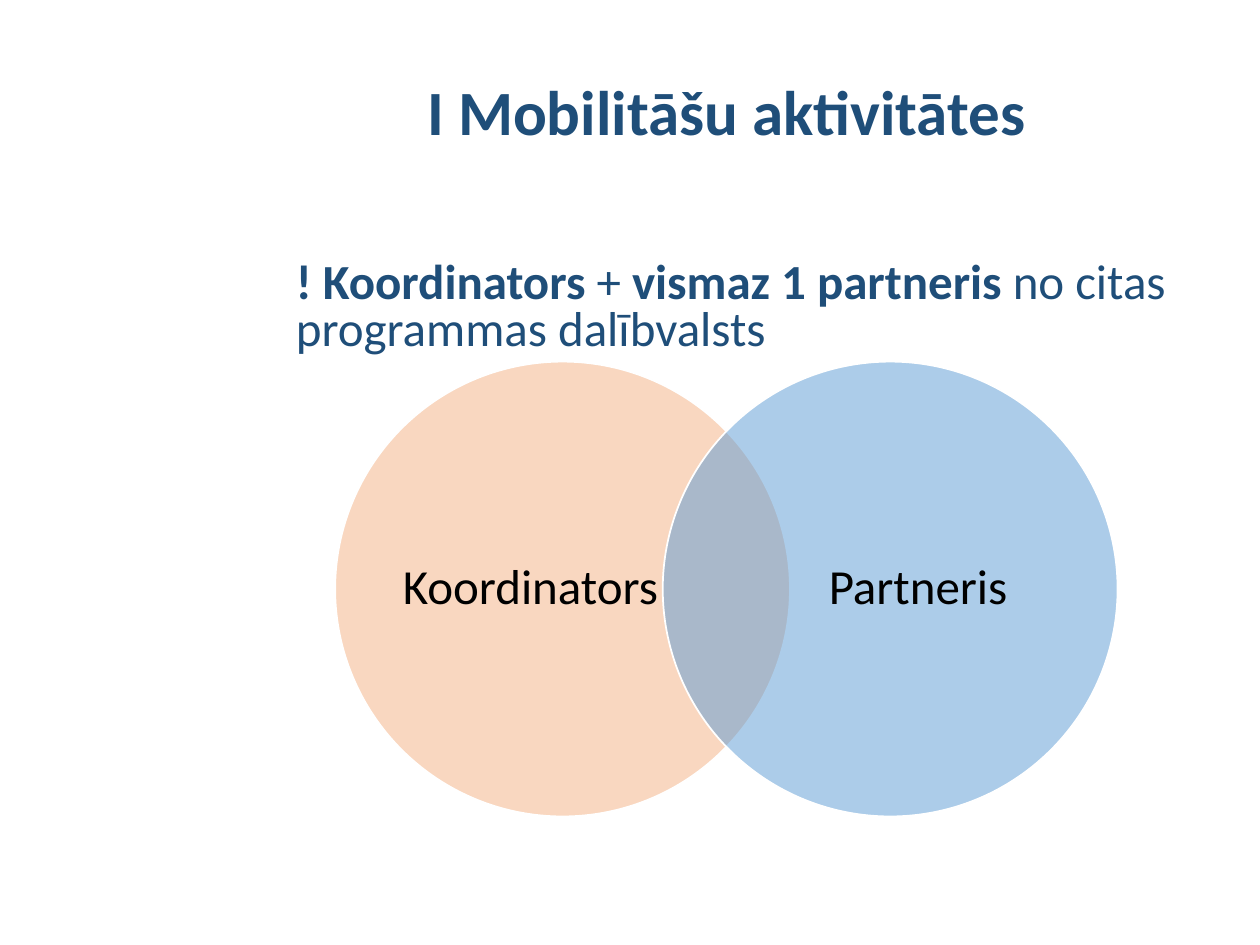
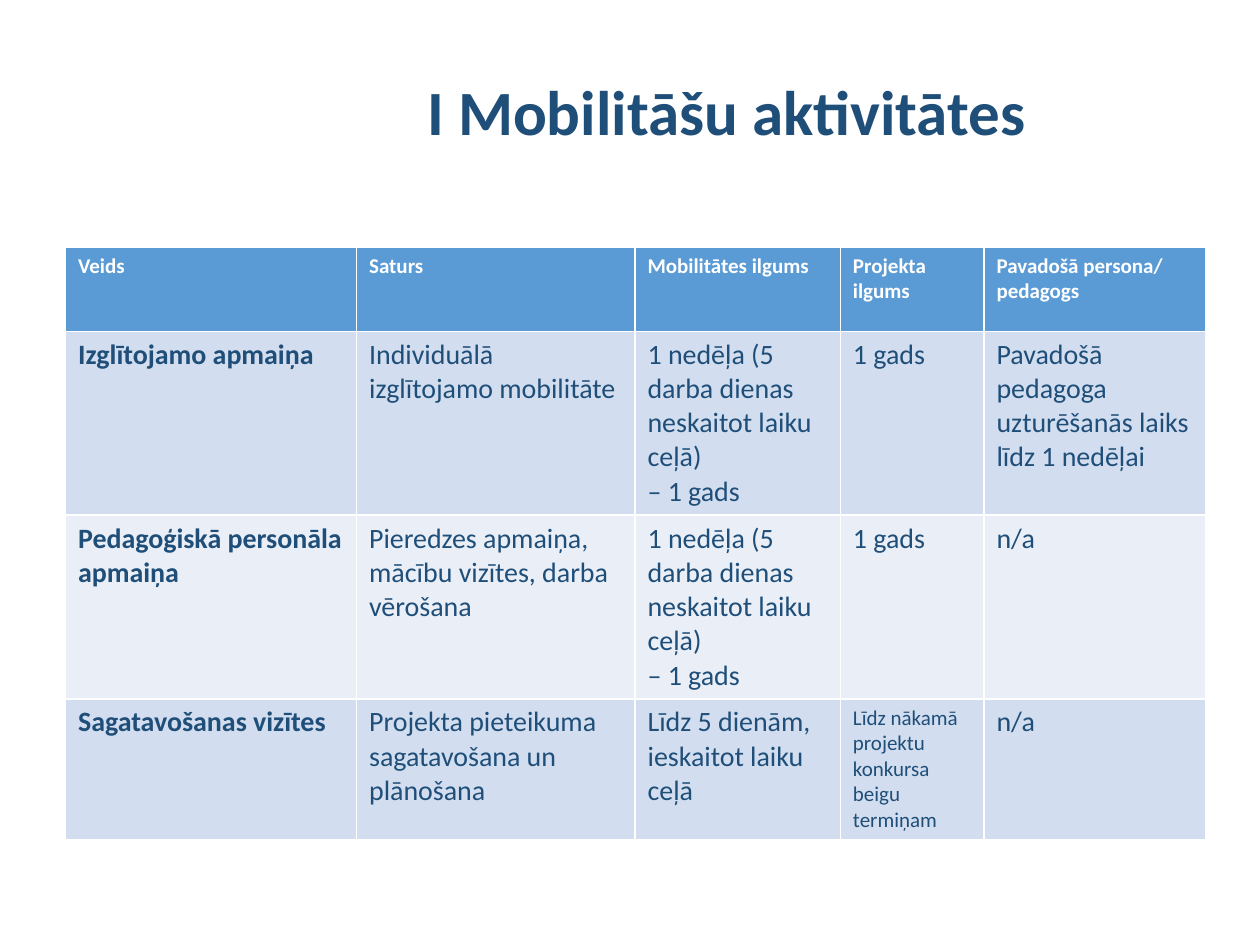
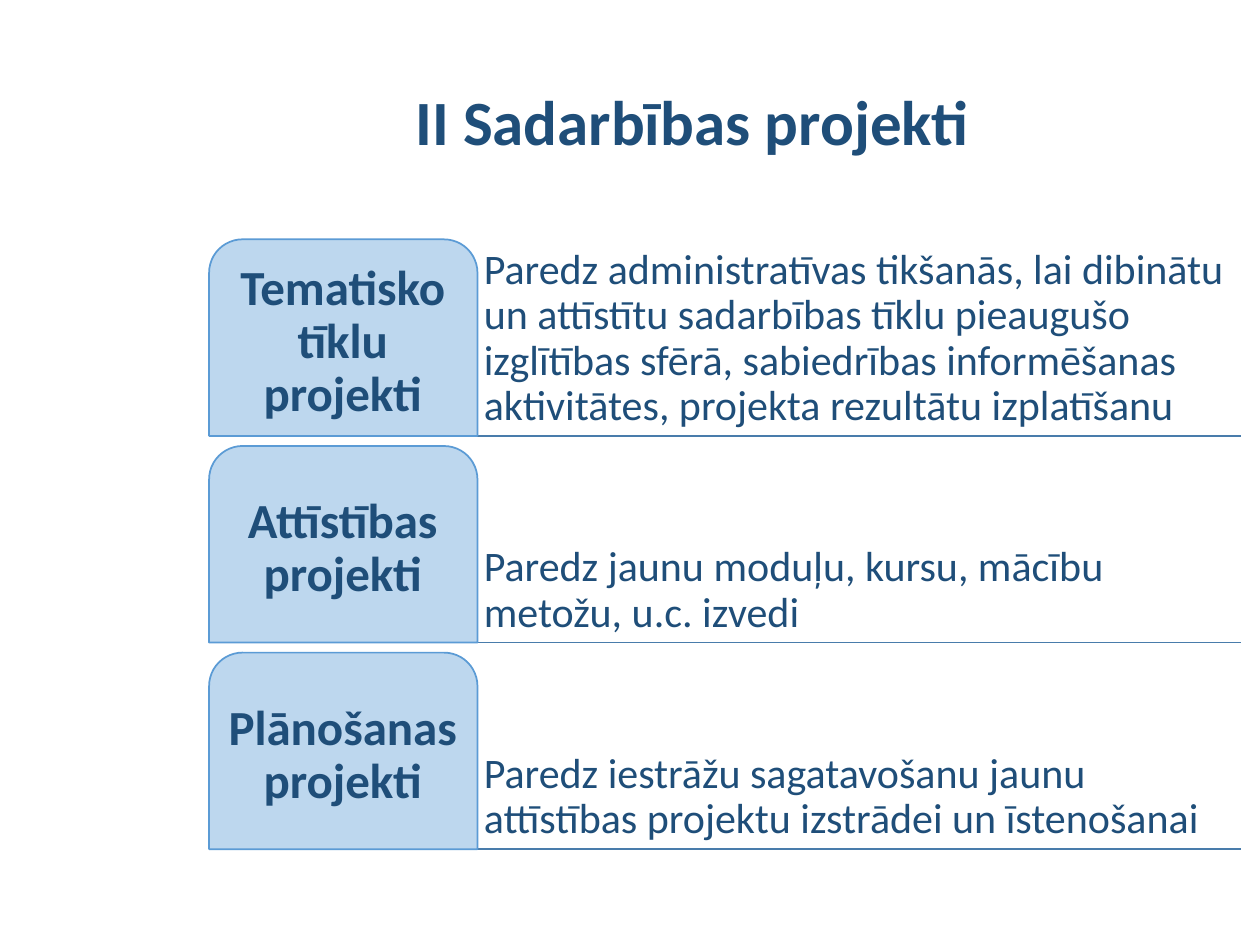
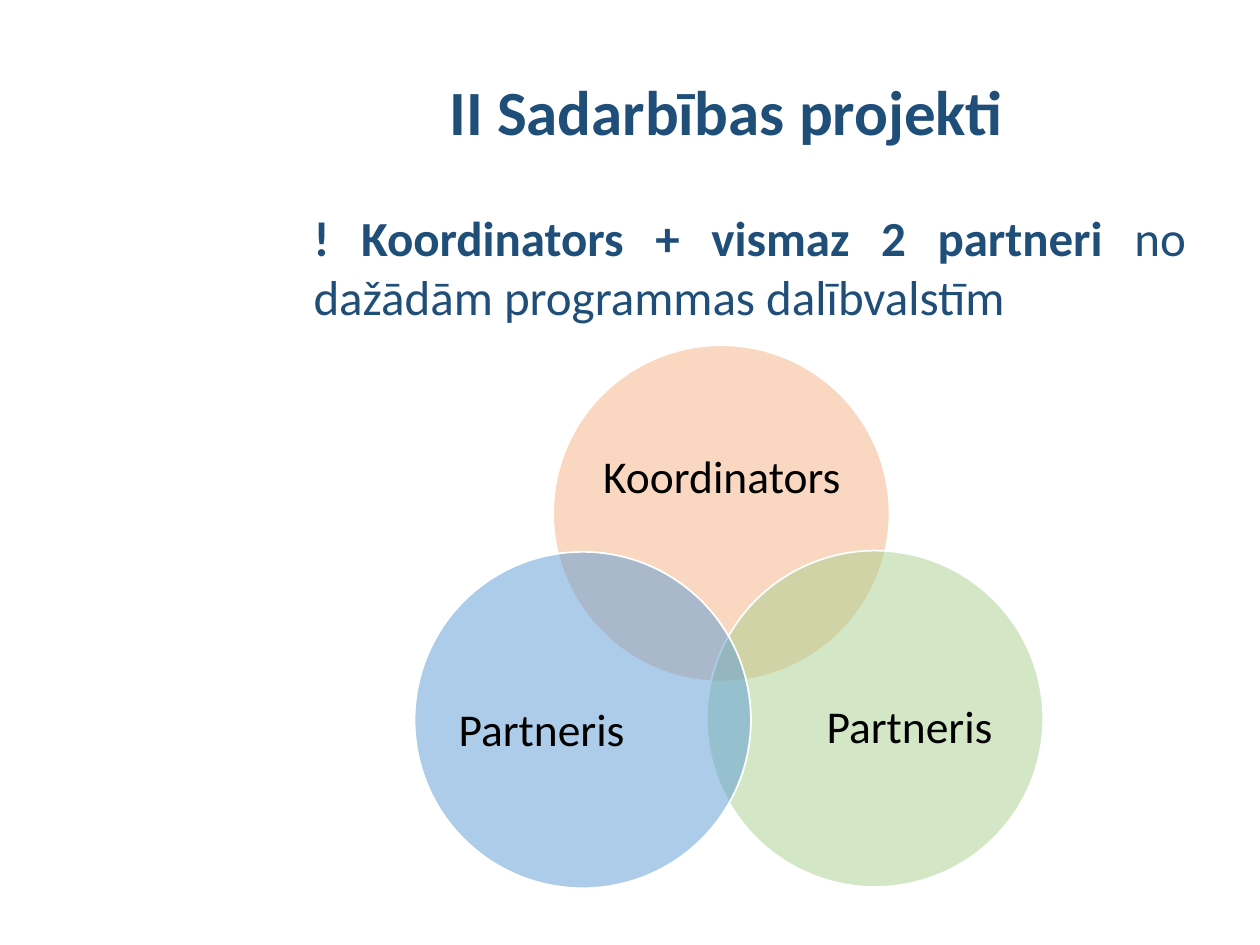
from lxml.etree import SubElement
from pptx import Presentation
from pptx.dml.color import RGBColor as RGB
from pptx.enum.shapes import MSO_CONNECTOR as LINE, MSO_SHAPE as SHAPE
from pptx.enum.text import MSO_ANCHOR as ANCHOR, PP_ALIGN as ALIGN
from pptx.oxml.ns import qn
from pptx.util import Inches, Pt


class Theme:
    font = "Calibri"
    navy = RGB.from_string("1F4E79")
    blue = RGB.from_string("5B9BD5")
    pale = RGB.from_string("BDD7EE")
    rule = RGB.from_string("497CAB")
    peach = RGB.from_string("F4B183")
    green = RGB.from_string("A9D18E")
    bands = RGB.from_string("D2DEEF"), RGB.from_string("EAEFF7")
    white = RGB.from_string("FFFFFF")
    black = RGB.from_string("000000")
    title, lead, text, venn, cell, small = 36, 28, 24, 26, 16, 12


def fill_in(para, runs, size, color, bold=False, align=ALIGN.LEFT, gap=None):
    """Write a paragraph from a string, or from (words, bold) pairs."""
    if isinstance(runs, str):
        para.text = runs
        para.font.bold = bold
    else:
        for words, heavy in runs:
            run = para.add_run()
            run.text = words
            run.font.bold = heavy
    para.font.name = Theme.font
    para.font.size = Pt(size)
    para.font.color.rgb = color
    para.alignment = align
    para.line_spacing = gap


def add_text(slide, box, runs, size, color, inset=None, anchor=ANCHOR.TOP, **style):
    frame = slide.shapes.add_textbox(*map(Inches, box)).text_frame
    frame.word_wrap = True
    frame.vertical_anchor = anchor
    if inset is not None:
        frame.margin_left = frame.margin_right = Inches(inset)
        frame.margin_top = frame.margin_bottom = Inches(inset)
    fill_in(frame.paragraphs[0], runs, size, color, **style)
    return frame.paragraphs[0]


deck = Presentation()
deck.slide_width, deck.slide_height = Inches(10), Inches(7.5)

# Titles
usual = 2.22, 0.4, 7.09, 1.03
heads = [
    ("I Mobilitāšu aktivitātes", usual),
    ("I Mobilitāšu aktivitātes", usual),
    ("II Sadarbības projekti", (2.1, 0.27, 6.79, 1.45)),
    ("II Sadarbības projekti", usual),
]
for words, box in heads:
    title = deck.slides.add_slide(deck.slide_layouts[5]).shapes.title
    title.left, title.top, title.width, title.height = map(Inches, box)
    title.text_frame.vertical_anchor = ANCHOR.MIDDLE
    fill_in(title.text_frame.paragraphs[0], words, Theme.title, Theme.navy,
            bold=True, align=ALIGN.CENTER, gap=0.9)
pair, kinds, plans, trio = deck.slides

# Lead sentences
lead = add_text(pair, (1.75, 2.03, 7.75, 1.61), [
    ("! Koordinators ", True), ("+ ", False), ("vismaz 1 partneris ", True),
    ("no citas programmas dalībvalsts", False),
], Theme.lead, Theme.navy, gap=0.8)
lead._p.get_or_add_pPr().set("marL", str(Inches(0.5)))
add_text(trio, (2.39, 1.6, 7.12, 1.21), [
    ("! Koordinators + vismaz 2 partneri ", True),
    ("no dažādām programmas dalībvalstīm", False),
], Theme.lead, Theme.navy, align=ALIGN.JUSTIFY)

# Overlapping circles: slide, left, top, size, colour, label, label box, type size
discs = [
    (pair, 2.66, 2.87, 3.61, Theme.peach, "Koordinators",
     (3.17, 3.29, 2.08, 2.76), Theme.lead),
    (pair, 5.26, 2.87, 3.61, Theme.blue, "Partneris ",
     (6.29, 3.29, 2.08, 2.76), Theme.lead),
    (trio, 4.39, 2.74, 2.67, Theme.peach, "Koordinators",
     (4.75, 3.2, 1.96, 1.2), Theme.venn),
    (trio, 5.61, 4.37, 2.67, Theme.green, "Partneris",
     (6.42, 5.05, 1.6, 1.47), Theme.venn),
    (trio, 3.29, 4.38, 2.67, Theme.blue, "Partneris ",
     (3.54, 5.07, 1.6, 1.47), Theme.venn),
]
for slide, left, top, size, color, label, box, points in discs:
    disc = slide.shapes.add_shape(SHAPE.OVAL, *map(Inches, (left, top, size, size)))
    disc.shadow.inherit = False
    disc.fill.solid()
    disc.fill.fore_color.rgb = color
    tint = disc._element.spPr.find(qn("a:solidFill"))[0]
    SubElement(tint, qn("a:alpha")).set("val", "50000")
    disc.line.color.rgb = Theme.white
    disc.line.width = Pt(1)
    add_text(slide, box, label, points, Theme.black, inset=0,
             anchor=ANCHOR.MIDDLE, align=ALIGN.CENTER, gap=0.9)

# Table of mobility kinds
week = "1 nedēļa (5 darba dienas neskaitot laiku ceļā)\n– 1 gads"
rows = [
    ("Veids", "Saturs", "Mobilitātes ilgums", "Projekta ilgums",
     "Pavadošā persona/ pedagogs"),
    ("Izglītojamo apmaiņa", "Individuālā izglītojamo mobilitāte", week, "1 gads",
     "Pavadošā pedagoga uzturēšanās laiks līdz 1 nedēļai"),
    ("Pedagoģiskā personāla apmaiņa",
     "Pieredzes apmaiņa, mācību vizītes, darba vērošana", week, "1 gads", "n/a"),
    ("Sagatavošanas vizītes", "Projekta pieteikuma sagatavošana un plānošana",
     "Līdz 5 dienām, ieskaitot laiku ceļā",
     "Līdz nākamā projektu konkursa beigu termiņam", "n/a"),
]
widths = 2.31, 2.21, 1.63, 1.14, 1.76
heights = 0.67, 1.44, 1.44, 1.08
grid = kinds.shapes.add_table(len(rows), len(widths),
                              *map(Inches, (0.52, 1.96, 9.05, 4.63))).table
for col, width in zip(grid.columns, widths):
    col.width = Inches(width)
for r, (row, height) in enumerate(zip(rows, heights)):
    grid.rows[r].height = Inches(height)
    for c, words in enumerate(row):
        cell = grid.cell(r, c)
        cell.fill.solid()
        cell.fill.fore_color.rgb = Theme.bands[(r - 1) % 2] if r else Theme.blue
        cell.text = words
        size = Theme.small if r == 0 or (r, c) == (3, 3) else Theme.cell
        for para in cell.text_frame.paragraphs:
            fill_in(para, para.text, size, Theme.navy if r else Theme.white,
                    bold=r == 0 or c == 0)

# Project kinds: tabs with ruled descriptions
tabs = [
    ("Tematisko tīklu projekti",
     "Paredz administratīvas tikšanās, lai dibinātu un attīstītu sadarbības tīklu "
     "pieaugušo izglītības sfērā, sabiedrības informēšanas aktivitātes, "
     "projekta rezultātu izplatīšanu"),
    ("Attīstības projekti", "Paredz jaunu moduļu, kursu, mācību metožu, u.c. izvedi"),
    ("Plānošanas projekti",
     "Paredz iestrāžu sagatavošanu jaunu attīstības projektu izstrādei un īstenošanai"),
]
left, wide, tall, step = 1.66, 2.13, 1.56, 1.64
tops = [1.9 + step * i for i in range(len(tabs))]
for top in reversed(tops):
    base = Inches(top + tall)
    rule = plans.shapes.add_connector(LINE.STRAIGHT, Inches(left), base,
                                      Inches(9.85), base)
    rule.line.color.rgb = Theme.rule
    rule.line.width = Pt(1)
    SubElement(rule._element.spPr, qn("a:effectLst"))
for top, (name, about) in zip(tops, tabs):
    add_text(plans, (left + wide, top, 6.06, tall), about, Theme.text, Theme.navy,
             inset=0.05, anchor=ANCHOR.BOTTOM, gap=0.9)
    tab = plans.shapes.add_shape(SHAPE.ROUND_2_SAME_RECTANGLE,
                                 *map(Inches, (left, top, wide, tall)))
    tab.adjustments[0], tab.adjustments[1] = 0.17, 0
    tab.shadow.inherit = False
    tab.fill.solid()
    tab.fill.fore_color.rgb = Theme.pale
    tab.line.color.rgb = Theme.blue
    tab.line.width = Pt(1)
    add_text(plans, (left + 0.07, top + 0.08, 1.98, 1.48), name, Theme.lead, Theme.navy,
             inset=0.06, anchor=ANCHOR.MIDDLE, bold=True, align=ALIGN.CENTER, gap=0.9)

deck.save("out.pptx")
